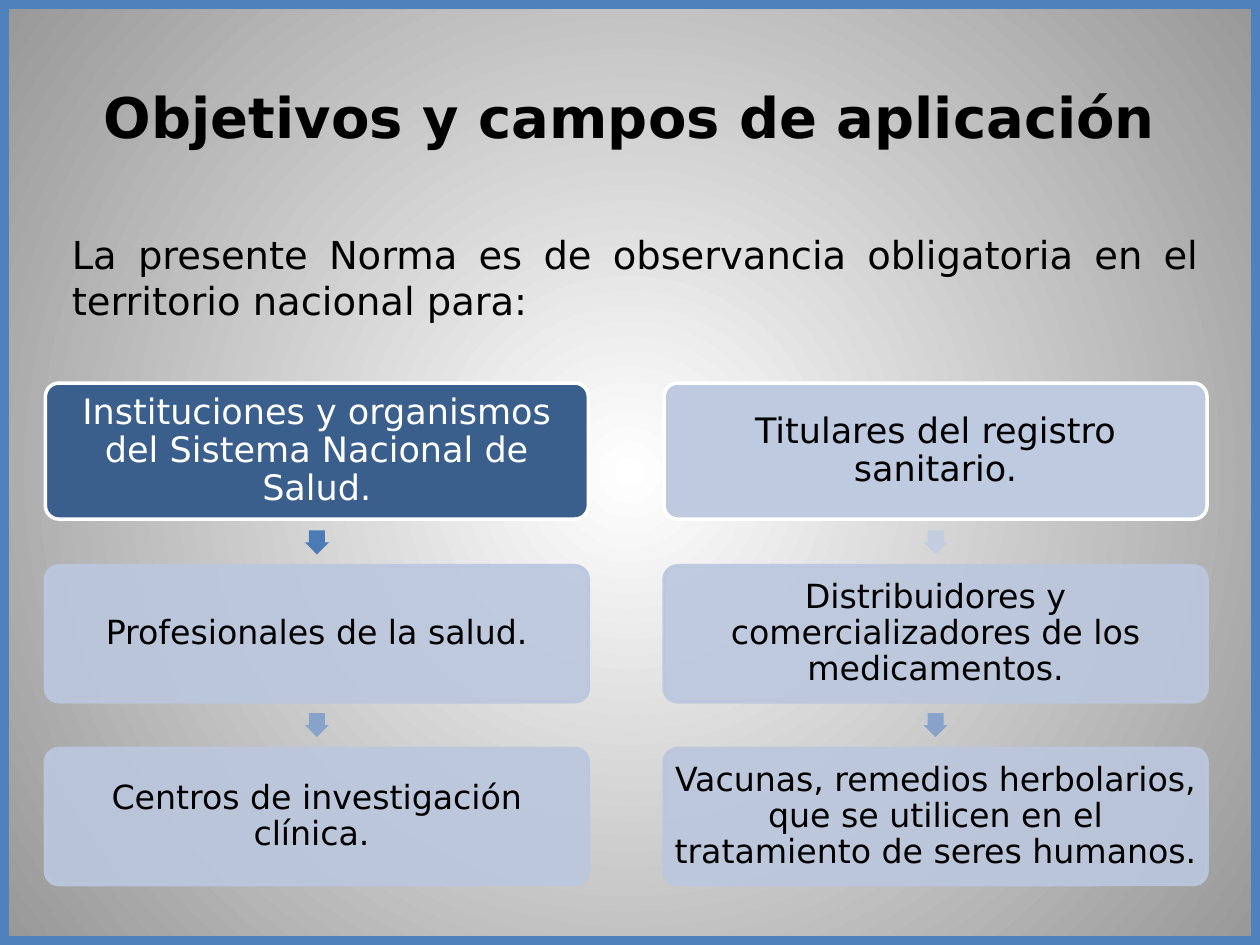
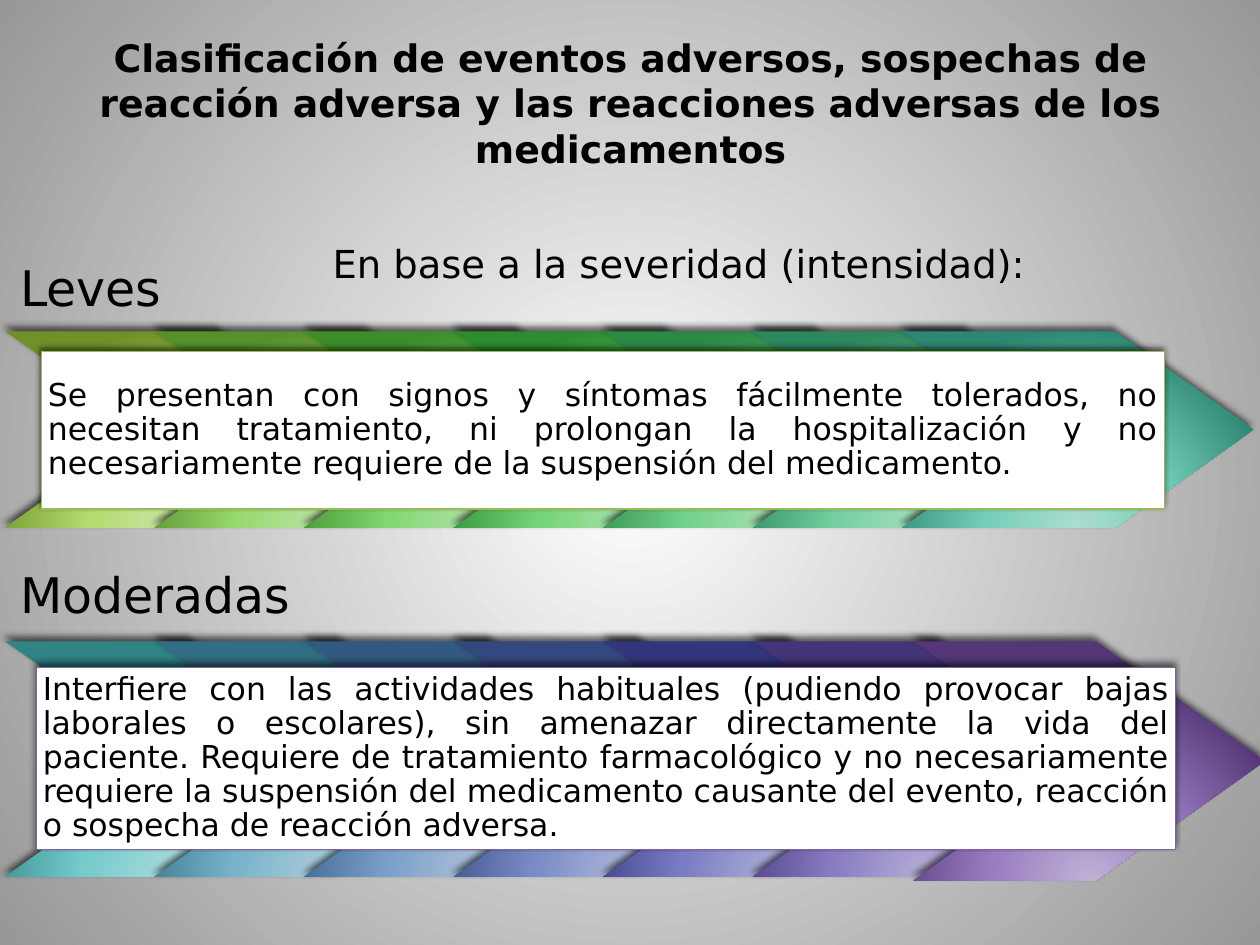
from lxml import etree
from pptx import Presentation
from pptx import util as u
from pptx.dml.color import RGBColor
from pptx.enum import shapes, text
from pptx.oxml import ns

FONT = "DejaVu Sans"
COLOURS = {
    "black": "000000", "white": "FFFFFF", "edge": "979797", "frame": "4F81BD",
    "lead": "3A5F8C", "lead_pale": "BECADF", "pale": "BBC7DE",
    "arrow": "4B7BB5", "arrow_pale": "C2CDE1", "arrow_mid": "88A3CA",
    "mild": "9BBB59", "moderate": "8064A2",
}
SHAPE = shapes.MSO_SHAPE
ALIGN = text.PP_ALIGN
ANCHOR = text.MSO_ANCHOR

# Slide 1 content
SCOPE_TITLE = "Objetivos y campos de aplicación"
SCOPE_INTRO = "La presente Norma es de observancia obligatoria en el territorio nacional para:"
SCOPE_COLUMNS = [
    {"fill": "lead", "font": "white", "arrows": ["arrow", "arrow_mid"], "items": [
        "Instituciones y organismos del Sistema Nacional de Salud.",
        "Profesionales de la salud.",
        "Centros de investigación clínica. "]},
    {"fill": "lead_pale", "font": "black", "arrows": ["arrow_pale", "arrow_mid"], "items": [
        "Titulares del registro sanitario.",
        "Distribuidores y comercializadores de los medicamentos.",
        "Vacunas, remedios herbolarios, que se utilicen en el tratamiento de seres humanos."]},
]

# Slide 2 content; chevrons hold (centre, middle, rim) gradient colours
SEVERITY_TITLE = ("Clasificación de eventos adversos, sospechas de reacción adversa "
                  "y las reacciones adversas de los medicamentos")
SEVERITY_BASIS = "En base a la severidad (intensidad): "
SEVERITY_BANDS = [
    {"label": "Leves", "label_top": 1.87, "top": 2.63, "height": 1.56,
     "last": (7.16, 1.56), "card": (0.33, 2.79, 8.91, 1.25), "line": "mild",
     "text": "Se presentan con signos y síntomas fácilmente tolerados, no necesitan "
             "tratamiento, ni prolongan la hospitalización y no necesariamente requiere "
             "de la suspensión del medicamento.",
     "chevrons": [("CDE5AA", "B3DB6F", "6F9128"), ("BEE3AA", "98D970", "559029"),
                  ("B3E2AB", "81D771", "3D8E2A"), ("ABE1AD", "72D476", "2B8C30"),
                  ("ACE0B7", "73D28B", "2C8A47"), ("ACDEC3", "74D0A1", "2D885D"),
                  ("ADDDD0", "75CEB7", "2E8772")]},
    {"label": "Moderadas", "label_top": 4.3, "top": 5.09, "height": 1.87,
     "last": (7.25, 1.9), "card": (0.29, 5.3, 9.04, 1.44), "line": "moderate",
     "text": "Interfiere con las actividades habituales (pudiendo provocar bajas laborales "
             "o escolares), sin amenazar directamente la vida del paciente. Requiere de "
             "tratamiento farmacológico y no necesariamente requiere la suspensión del "
             "medicamento causante del evento, reacción o sospecha de reacción adversa. ",
     "chevrons": [("ADDBDC", "76CBCC", "308485"), ("AECDDB", "77B3CA", "316E83"),
                  ("AFC2D9", "789EC8", "325A81"), ("AFB8D8", "798BC6", "33487F"),
                  ("B0B1D7", "7A7CC4", "34367D"), ("B7B0D6", "887BC2", "44357B"),
                  ("BFB1D5", "997DC0", "553779")]},
]


def colour(name):
    return RGBColor.from_string(COLOURS[name])


def add_child(parent, tag, **attributes):
    child = etree.SubElement(parent, ns.qn("a:" + tag))
    for key, value in attributes.items():
        child.set(key, str(value))
    return child


def set_radial(fill, element, stops, bottom):
    """Circular gradient; stops are (percent, hex), bottom is the focus inset in percent."""
    fill.gradient()
    gradient = element.find(".//" + ns.qn("a:gradFill"))
    for child in list(gradient):
        gradient.remove(child)
    stop_list = add_child(gradient, "gsLst")
    for percent, value in stops:
        stop = add_child(stop_list, "gs", pos=percent * 1000)
        add_child(stop, "srgbClr", val=value)
    circle = add_child(gradient, "path", path="circle")
    add_child(circle, "fillToRect", l=50000, t=(100 - bottom) * 1000,
              r=50000, b=bottom * 1000)


def set_opacity(element, percent):
    for value in element.spPr.iter(ns.qn("a:srgbClr")):
        add_child(value, "alpha", val=percent * 1000)


def add_shadow(shape):
    effects = shape._element.spPr.find(ns.qn("a:effectLst"))
    shadow = add_child(effects, "outerShdw", blurRad=u.Pt(4), dist=u.Pt(3),
                       dir=245 * 60000, algn="tl", rotWithShape=0)
    add_child(add_child(shadow, "srgbClr", val=COLOURS["black"]), "alpha", val=60000)


def place(shape, left, top, width, height):
    shape.left, shape.top = u.Inches(left), u.Inches(top)
    shape.width, shape.height = u.Inches(width), u.Inches(height)


def write(shape, words, size, align, anchor, font="black", bold=False,
          spacing=None, margin=None):
    frame = shape.text_frame
    frame.word_wrap = True
    frame.auto_size = text.MSO_AUTO_SIZE.NONE
    frame.vertical_anchor = anchor
    if margin is not None:
        frame.margin_left = frame.margin_right = u.Inches(margin)
        frame.margin_top = frame.margin_bottom = u.Inches(margin)
    para = frame.paragraphs[0]
    para.alignment = align
    if spacing:
        para.line_spacing = spacing
    span = para.add_run()
    span.text = words
    span.font.name, span.font.size, span.font.bold = FONT, u.Pt(size), bold
    span.font.color.rgb = colour(font)
    return para


def add_shape(page, kind, area, fill=None, line=None, weight=1, adjust=()):
    shape = page.shapes.add_shape(kind, *map(u.Inches, area))
    shape.shadow.inherit = False
    for index, value in enumerate(adjust):
        shape.adjustments[index] = value
    if fill:
        shape.fill.solid()
        shape.fill.fore_color.rgb = colour(fill)
    else:
        shape.fill.background()
    if line:
        shape.line.color.rgb = colour(line)
        shape.line.width = u.Pt(weight)
    else:
        shape.line.fill.background()
    return shape


def add_text(page, area, words, size, align, anchor, **style):
    box = page.shapes.add_textbox(*map(u.Inches, area))
    write(box, words, size, align, anchor, **style)


def add_page(deck, layout, title, area, size):
    page = deck.slides.add_slide(deck.slide_layouts[layout])
    place(page.shapes.title, *area)
    write(page.shapes.title, title, size, ALIGN.CENTER, ANCHOR.MIDDLE, bold=True)
    return page


def build_scope(deck):
    page = add_page(deck, 1, SCOPE_TITLE, (0.5, 0.3, 9, 1.25), 32)

    # Introduction without bullet
    body = page.placeholders[1]
    place(body, 0.42, 1.78, 9.19, 5.72)
    para = write(body, SCOPE_INTRO, 22, ALIGN.JUSTIFY, ANCHOR.TOP)
    properties = para._p.get_or_add_pPr()
    properties.set("marL", str(u.Inches(0.05)))
    properties.set("indent", "0")
    add_child(properties, "buNone")

    # Two columns of boxes, an arrow in the middle of each gap
    left, top, width, height = 0.36, 3.04, 4.31, 1.08
    column_step, row_step, arrow_size = 4.91, 1.45, 0.19
    for column, group in enumerate(SCOPE_COLUMNS):
        x = left + column * column_step
        for row, words in enumerate(group["items"]):
            y = top + row * row_step
            first = row == 0
            box = add_shape(page, SHAPE.ROUNDED_RECTANGLE, (x, y, width, height),
                            group["fill"] if first else "pale",
                            "white" if first else "pale", 2, [0.1])
            if not first:
                set_opacity(box._element, 90)
            write(box, words, 20 if first else 19, ALIGN.CENTER, ANCHOR.MIDDLE,
                  font=group["font"] if first else "black", spacing=0.9, margin=0.03)
        for row, fill in enumerate(group["arrows"]):
            middle = top + row * row_step + (height + row_step) / 2
            add_shape(page, SHAPE.DOWN_ARROW,
                      (x + (width - arrow_size) / 2, middle - arrow_size / 2,
                       arrow_size, arrow_size), fill, adjust=[0.667, 0.5])

    # Frame around the slide
    add_shape(page, SHAPE.RECTANGLE, (0, 0, 10, 7.5), line="frame", weight=10)


def build_severity(deck):
    page = add_page(deck, 5, SEVERITY_TITLE, (0.42, 0.24, 9.17, 1.15), 21.6)
    left, step, width = 0.04, 1.187, 2.79
    for band in SEVERITY_BANDS:
        add_text(page, (left, band["label_top"], 8.44, 0.77), band["label"], 28,
                 ALIGN.LEFT, ANCHOR.BOTTOM, spacing=0.9, margin=0.12)

        # Overlapping chevrons; the last one has its own place and height
        places = [(left + i * step, band["height"]) for i in range(6)] + [band["last"]]
        for (x, height), hues in zip(places, band["chevrons"]):
            chevron = add_shape(page, SHAPE.CHEVRON, (x, band["top"], width, height),
                                adjust=[0.706])
            set_radial(chevron.fill, chevron._element, zip((0, 46, 100), hues), -55)
            add_shadow(chevron)

        # Description card
        card = add_shape(page, SHAPE.RECTANGLE, band["card"], "white", band["line"], 0.75)
        add_shadow(card)
        write(card, band["text"], 18, ALIGN.JUSTIFY, ANCHOR.MIDDLE,
              spacing=0.9, margin=0.05)
    add_text(page, (1.85, 1.86, 7.17, 0.47), SEVERITY_BASIS, 22, ALIGN.CENTER, ANCHOR.TOP)


def main():
    deck = Presentation()
    deck.slide_width, deck.slide_height = u.Inches(10), u.Inches(7.5)
    master = deck.slide_master
    set_radial(master.background.fill, master._element,
               [(0, COLOURS["white"]), (100, COLOURS["edge"])], 50)
    build_scope(deck)
    build_severity(deck)
    deck.save("out.pptx")


if __name__ == "__main__":
    main()
